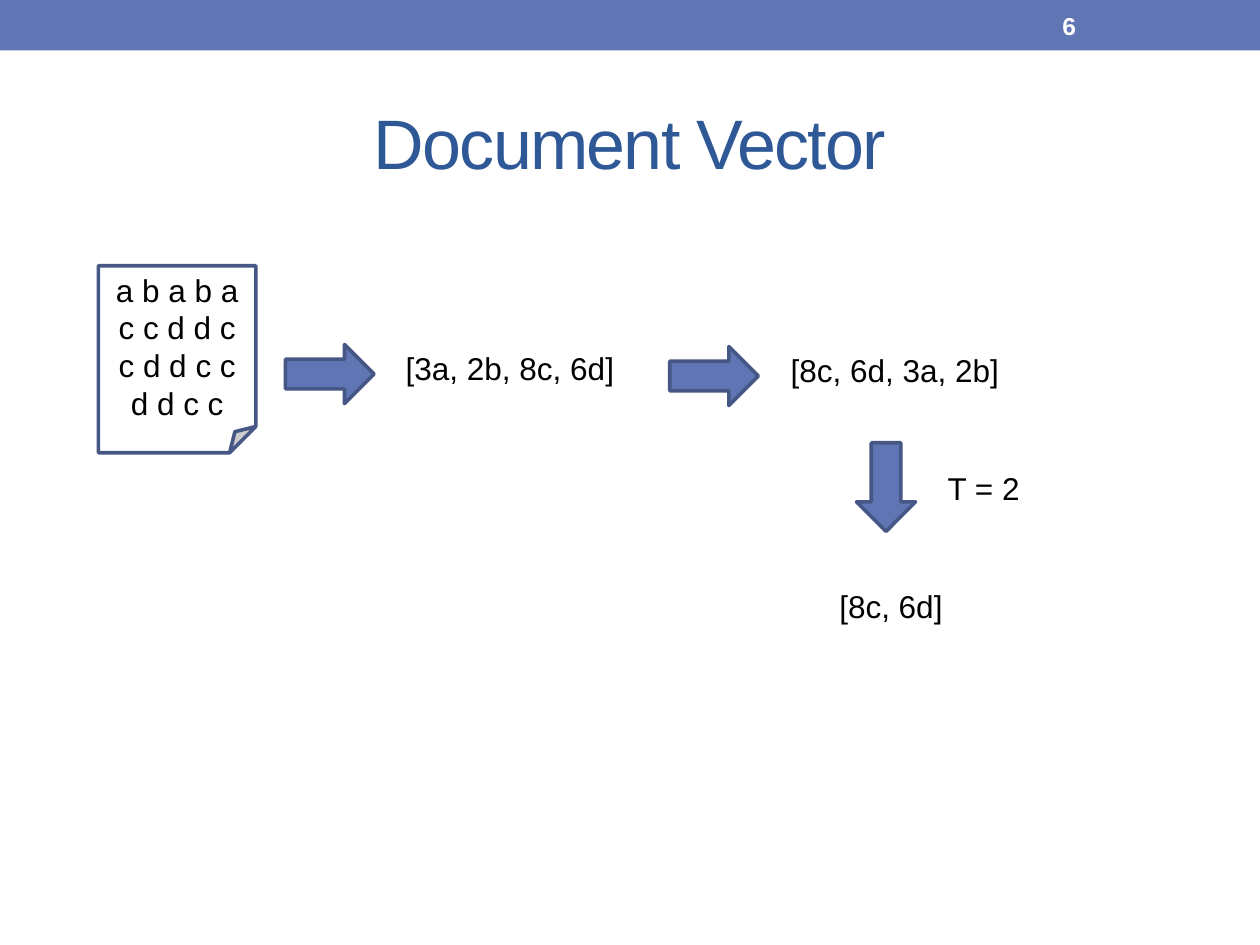
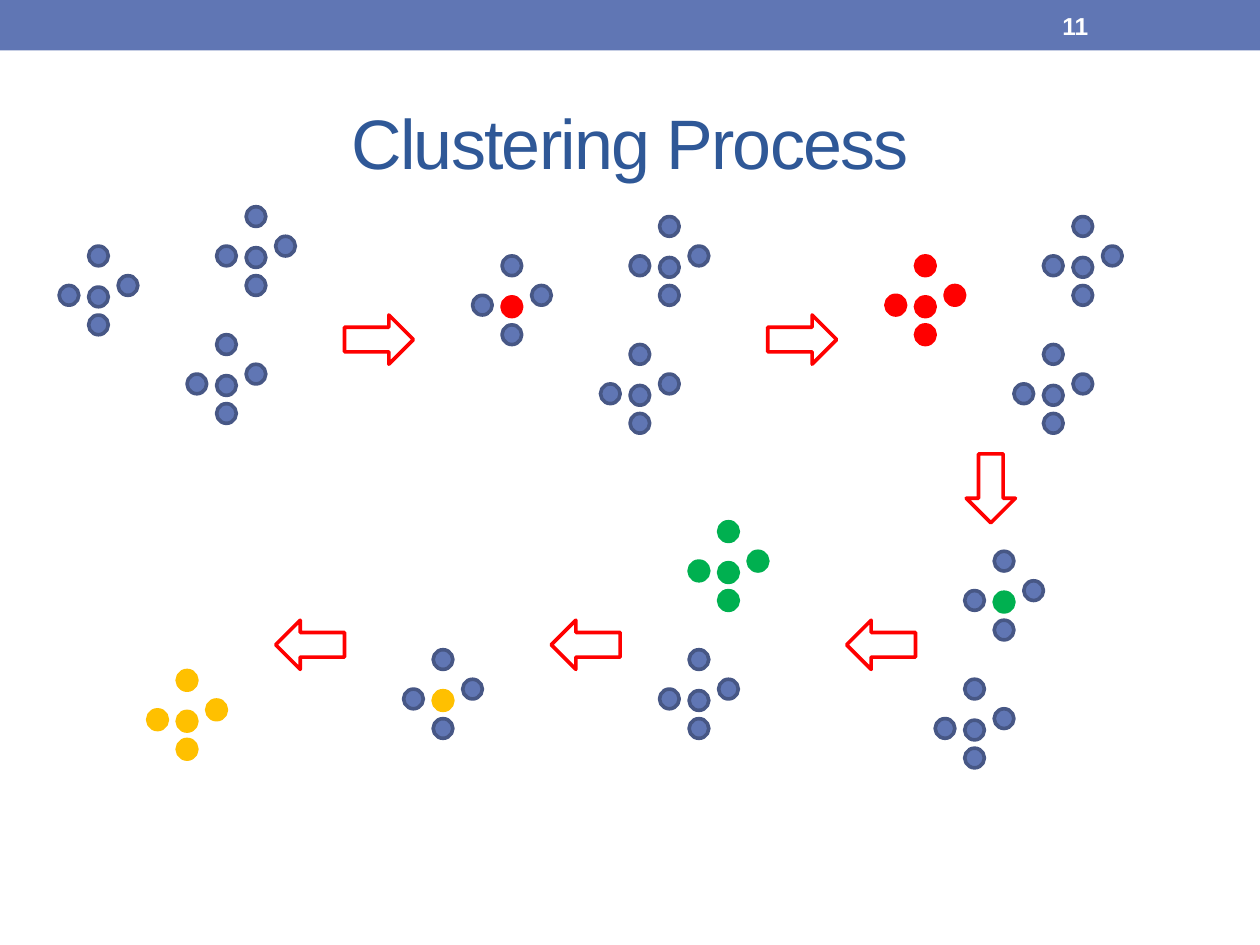
import pptx
import pptx.dml.color
import pptx.enum.shapes
import pptx.enum.text
import pptx.util

Pt = pptx.util.Pt
SHAPES = pptx.enum.shapes.MSO_SHAPE
ANCHOR = pptx.enum.text.MSO_ANCHOR
ALIGN = pptx.enum.text.PP_ALIGN

FONT = "Arial"
BLUE, OUTLINE, TITLE = "6076B4", "475785", "2F5897"
WHITE, BLACK = "FFFFFF", "000000"
RED, GREEN, GOLD = "FF0000", "00B050", "FFC000"

DOT = 11.25
DOT_OFFSETS = [(0, 22.5), (16.88, 0), (16.88, 23.4), (33.75, 16.88), (16.88, 39.4)]
CENTRE_DOT = 2
LEFT, TOP, BOTTOM = (0, 22.5), (90, 0), (73.13, 73.13)


def rgb(value):
    """Turn a hex string into a colour."""
    return pptx.dml.color.RGBColor.from_string(value)


def add_run(p, text, size, color, bold=False):
    """Add one formatted run to a paragraph."""
    r = p.add_run()
    r.text = text
    r.font.name = FONT
    r.font.size = Pt(size)
    r.font.bold = bold
    r.font.color.rgb = rgb(color)
    return r


def add_shape(shapes, kind, x, y, w, h, fill=None, line=None, angle=0):
    """Add a flat preset shape."""
    sp = shapes.add_shape(kind, Pt(x), Pt(y), Pt(w), Pt(h))
    sp.shadow.inherit = False
    sp.rotation = angle
    if fill:
        sp.fill.solid()
        sp.fill.fore_color.rgb = rgb(fill)
    else:
        sp.fill.background()
    if line:
        sp.line.color.rgb = rgb(line)
        sp.line.width = Pt(2.08)
    else:
        sp.line.fill.background()
    return sp


def add_band(prs, s):
    """Put the top band on the slide master, behind everything."""
    band = add_shape(s.shapes, SHAPES.RECTANGLE, 0, 0, 720, 28.8, BLUE)
    band.element.nvSpPr.cNvPr.id = 100
    prs.slide_master.shapes.element.insert(2, band.element)


def add_slide(prs, title, number):
    """Add a slide with its title and page number."""
    s = prs.slides.add_slide(prs.slide_layouts.get_by_name("Title Only"))
    sp = s.shapes.title
    sp.left, sp.top, sp.width, sp.height = Pt(36), Pt(41.75), Pt(648), Pt(78)
    tf = sp.text_frame
    tf.vertical_anchor = ANCHOR.MIDDLE
    p = tf.paragraphs[0]
    p.alignment = ALIGN.CENTER
    r = add_run(p, title, 40, TITLE)
    r.font._element.set("spc", "-100")
    tf = s.shapes.add_textbox(Pt(600), Pt(1.5), Pt(84), Pt(26)).text_frame
    tf.word_wrap = True
    tf.vertical_anchor = ANCHOR.MIDDLE
    add_run(tf.paragraphs[0], number, 14, WHITE, bold=True)
    return s


def add_label(s, text, x, y, w):
    """Add a one-line label."""
    tf = s.shapes.add_textbox(Pt(x), Pt(y), Pt(w), Pt(29)).text_frame
    tf.word_wrap = False
    tf.auto_size = pptx.enum.text.MSO_AUTO_SIZE.SHAPE_TO_FIT_TEXT
    add_run(tf.paragraphs[0], text, 18, BLACK)


def add_document(s, text, x, y, w, h):
    """Add a page with a folded corner."""
    sp = add_shape(s.shapes, SHAPES.FOLDED_CORNER, x, y, w, h, WHITE, OUTLINE)
    tf = sp.text_frame
    tf.word_wrap = True
    tf.vertical_anchor = ANCHOR.MIDDLE
    p = tf.paragraphs[0]
    p.alignment = ALIGN.CENTER
    add_run(p, text, 18, BLACK)


def add_cluster(shapes, x, y, seed=None, members=None):
    """Add five dots, with the centre and the others coloured if asked."""
    for i, (dx, dy) in enumerate(DOT_OFFSETS):
        color = seed if i == CENTRE_DOT else members
        add_shape(shapes, SHAPES.OVAL, x + dx, y + dy, DOT, DOT,
                  color or BLUE, color or OUTLINE)


def add_stage(s, x, y, clusters):
    """Add one stage as a group of clusters."""
    group = s.shapes.add_group_shape()
    for (dx, dy), *colors in clusters:
        add_cluster(group.shapes, x + dx, y + dy, *colors)


def document_vector(s):
    """Fill the document vector slide."""
    add_document(s, "a b a b a c c d d c c d d c c d d c c", 56.25, 151.88, 90, 106.88)
    for x, y, angle in [(163.13, 196.88, 0), (382.75, 198, 0), (481, 261.5, 90)]:
        add_shape(s.shapes, SHAPES.RIGHT_ARROW, x, y, 50.63, 33.75, BLUE, OUTLINE, angle)
    for label in [("[3a, 2b, 8c, 6d]", 224.75, 195.75, 134.5),
                  ("[8c, 6d, 3a, 2b]", 444.75, 196.88, 134.5),
                  ("[8c, 6d]", 472.5, 331.88, 74),
                  ("T = 2", 534.38, 264.38, 56)]:
        add_label(s, *label)


def clustering_process(s):
    """Fill the clustering process slide."""
    stages = [
        (33.75, 118.13, [(LEFT,), (TOP,), (BOTTOM,)]),
        (270, 123.75, [(LEFT, RED), (TOP,), (BOTTOM,)]),
        (506.25, 123.75, [(LEFT, RED, RED), (TOP,), (BOTTOM,)]),
        (461.25, 315, [(TOP, GREEN), (BOTTOM,)]),
        (303.75, 298.13, [(TOP, GREEN, GREEN), (BOTTOM,)]),
        (157.5, 298.13, [(BOTTOM, GOLD)]),
        (11.25, 310, [(BOTTOM, GOLD, GOLD)]),
    ]
    for stage in stages:
        add_stage(s, *stage)
    arrows = [(196.88, 180, 0), (438.75, 180, 0), (546.5, 265, 90),
              (483.75, 354.38, 180), (315, 354.38, 180), (157.5, 354.38, 180)]
    for x, y, angle in arrows:
        add_shape(s.shapes, SHAPES.RIGHT_ARROW, x, y, 39.38, 28.13, line=RED, angle=angle)


def main():
    """Build and save the slides."""
    prs = pptx.Presentation()
    prs.slide_width, prs.slide_height = Pt(720), Pt(540)
    s = add_slide(prs, "Document Vector", "6")
    add_band(prs, s)
    document_vector(s)
    clustering_process(add_slide(prs, "Clustering Process", "11"))
    prs.save("out.pptx")


if __name__ == "__main__":
    main()
